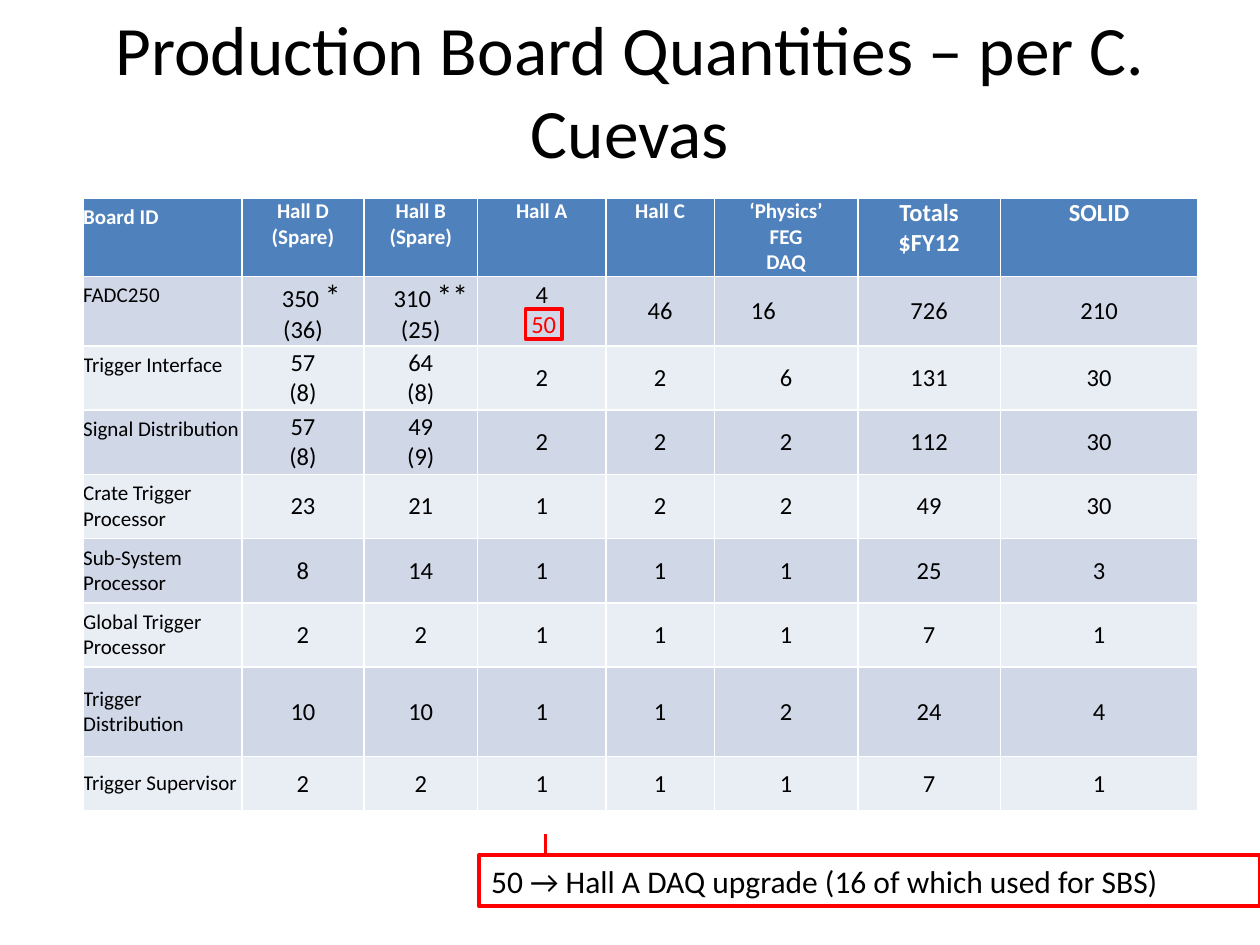
from typing import NamedTuple

from lxml.etree import SubElement
from pptx import Presentation
from pptx.dml.color import RGBColor
from pptx.enum.shapes import MSO_CONNECTOR, MSO_SHAPE
from pptx.enum.text import MSO_ANCHOR, MSO_AUTO_SIZE, PP_ALIGN
from pptx.oxml.ns import qn
from pptx.util import Inches, Pt

WHITE = RGBColor(0xFF, 0xFF, 0xFF)
BLACK = RGBColor(0, 0, 0)
RED = RGBColor(0xFF, 0, 0)
HEADER_BLUE = RGBColor(0x4F, 0x81, 0xBD)
BANDS = (RGBColor(0xE9, 0xED, 0xF4), RGBColor(0xD0, 0xD8, 0xE8))
FONT = "Calibri"

COL_WIDTHS = (1.26, 0.97, 0.9, 1.02, 0.86, 1.14, 1.13, 1.57)
HEADER_HEIGHT = 0.62
HEADER = ("Board ID", "Hall D\n(Spare)", "Hall B\n(Spare)", "Hall A", "Hall C",
          "‘Physics’\nFEG\nDAQ", "Totals\n$FY12", "SOLID")
LARGE_HEADER_FROM = 6


class Board(NamedTuple):
    name: str
    quantities: tuple
    height: float = 0.51
    name_anchor: MSO_ANCHOR = MSO_ANCHOR.MIDDLE


class Box(NamedTuple):
    """A rectangle in shares of the slide's width and height."""
    left: float
    top: float
    width: float
    height: float


BOARDS = (
    Board("FADC250", ("350 *\n(36)", "310 **\n(25)", 4, 46, 16, 726, 210), 0.55, MSO_ANCHOR.TOP),
    Board("Trigger Interface", ("57\n(8)", "64\n(8)", 2, 2, 6, 131, 30), name_anchor=MSO_ANCHOR.TOP),
    Board("Signal Distribution", ("57\n(8)", "49\n(9)", 2, 2, 2, 112, 30), name_anchor=MSO_ANCHOR.TOP),
    Board("Crate Trigger Processor", (23, 21, 1, 2, 2, 49, 30)),
    Board("Sub-System Processor", (8, 14, 1, 1, 1, 25, 3)),
    Board("Global Trigger Processor", (2, 2, 1, 1, 1, 7, 1)),
    Board("Trigger Distribution", (10, 10, 1, 1, 2, 24, 4), 0.71),
    Board("Trigger Supervisor", (2, 2, 1, 1, 1, 7, 1), 0.43),
)

prs = Presentation()
prs.slide_width, prs.slide_height = Inches(10), Inches(7.5)


def x(share: float) -> int:
    return round(prs.slide_width * share)


def y(share: float) -> int:
    return round(prs.slide_height * share)


def place(box: Box) -> tuple:
    return x(box.left), y(box.top), x(box.width), y(box.height)


def style(p, size: float, color: RGBColor, align=PP_ALIGN.LEFT, bold=False) -> None:
    p.alignment = align
    f = p.font
    f.name, f.size, f.bold, f.color.rgb = FONT, Pt(size), bold, color


def fill_cell(cell, text, fill, size, color, bold=False, anchor=MSO_ANCHOR.MIDDLE, is_name=False) -> None:
    cell.fill.solid()
    cell.fill.fore_color.rgb = fill
    cell.vertical_anchor = anchor
    cell.margin_left = cell.margin_right = 0
    cell.margin_top = cell.margin_bottom = Inches(0.05 if is_name else 0)
    cell.text = str(text)
    for p in cell.text_frame.paragraphs:
        style(p, size, color, PP_ALIGN.LEFT if is_name else PP_ALIGN.CENTER, bold)


def enlarge_stars(cell, indent: float) -> None:
    """Set the footnote stars larger and shift their line to the right."""
    p = cell.text_frame.paragraphs[0]
    r = p.runs[0]
    number, stars = r.text.split()
    r.text = number + " "
    star_run = p.add_run()
    star_run.text = stars
    star_run.font.size = Pt(18)
    p._p.get_or_add_pPr().set("marL", str(Inches(indent)))


def add_red_box(s, box: Box, text: str, size: float, color: RGBColor, align, inset: float):
    sp = s.shapes.add_shape(MSO_SHAPE.RECTANGLE, *place(box))
    sp.shadow.inherit = False
    sp.fill.background()
    sp.line.color.rgb, sp.line.width = RED, Pt(2)
    tf = sp.text_frame
    tf.word_wrap = True
    tf.vertical_anchor = MSO_ANCHOR.MIDDLE
    tf.margin_left = tf.margin_right = Inches(inset)
    tf.margin_top = tf.margin_bottom = 0
    tf.text = text
    style(tf.paragraphs[0], size, color, align)


def add_title(s) -> None:
    title = s.shapes.title
    title.left, title.top, title.width, title.height = place(Box(0, 0.033, 1, 0.123))
    tf = title.text_frame
    tf.text = "Production Board Quantities – per C. Cuevas"
    tf.auto_size = MSO_AUTO_SIZE.NONE
    tf.vertical_anchor = MSO_ANCHOR.MIDDLE
    style(tf.paragraphs[0], 39.6, BLACK, PP_ALIGN.CENTER)


def add_board_table(s) -> None:
    heights = [HEADER_HEIGHT] + [board.height for board in BOARDS]
    table = s.shapes.add_table(len(heights), len(COL_WIDTHS), x(0.066), y(0.21),
                               Inches(sum(COL_WIDTHS)), Inches(sum(heights))).table
    for column, width in zip(table.columns, COL_WIDTHS):
        column.width = Inches(width)
    for row, height in zip(table.rows, heights):
        row.height = Inches(height)

    for c, text in enumerate(HEADER):
        fill_cell(table.cell(0, c), text, HEADER_BLUE, 14 if c >= LARGE_HEADER_FROM else 12,
                  WHITE, True, MSO_ANCHOR.TOP, c == 0)
    for i, board in enumerate(BOARDS, 1):
        fill = BANDS[i % 2]
        fill_cell(table.cell(i, 0), board.name, fill, 12, BLACK, anchor=board.name_anchor, is_name=True)
        for c, quantity in enumerate(board.quantities, 1):
            fill_cell(table.cell(i, c), quantity, fill, 14, BLACK)

    enlarge_stars(table.cell(1, 1), 0.13)
    enlarge_stars(table.cell(1, 2), 0.16)
    hall_a = table.cell(1, 3)
    hall_a.vertical_anchor = MSO_ANCHOR.TOP
    hall_a.margin_top = Inches(0.03)
    table.cell(1, 5).margin_right = Inches(0.36)


def add_callout_line(s) -> None:
    line = s.shapes.add_connector(MSO_CONNECTOR.STRAIGHT, x(0.433), y(0.905), x(0.433), y(0.883))
    line.line.color.rgb, line.line.width = RED, Pt(2)
    SubElement(line._element.spPr, qn("a:effectLst"))


def main() -> None:
    s = prs.slides.add_slide(prs.slide_layouts[5])
    add_title(s)
    add_board_table(s)
    add_red_box(s, Box(0.38, 0.905, 0.62, 0.054), "50 → Hall A DAQ upgrade (16 of which used for SBS)",
                18, BLACK, PP_ALIGN.LEFT, 0.1)
    add_red_box(s, Box(0.417, 0.327, 0.029, 0.032), "50", 14, RED, PP_ALIGN.CENTER, 0)
    add_callout_line(s)
    prs.save("out.pptx")


if __name__ == "__main__":
    main()
